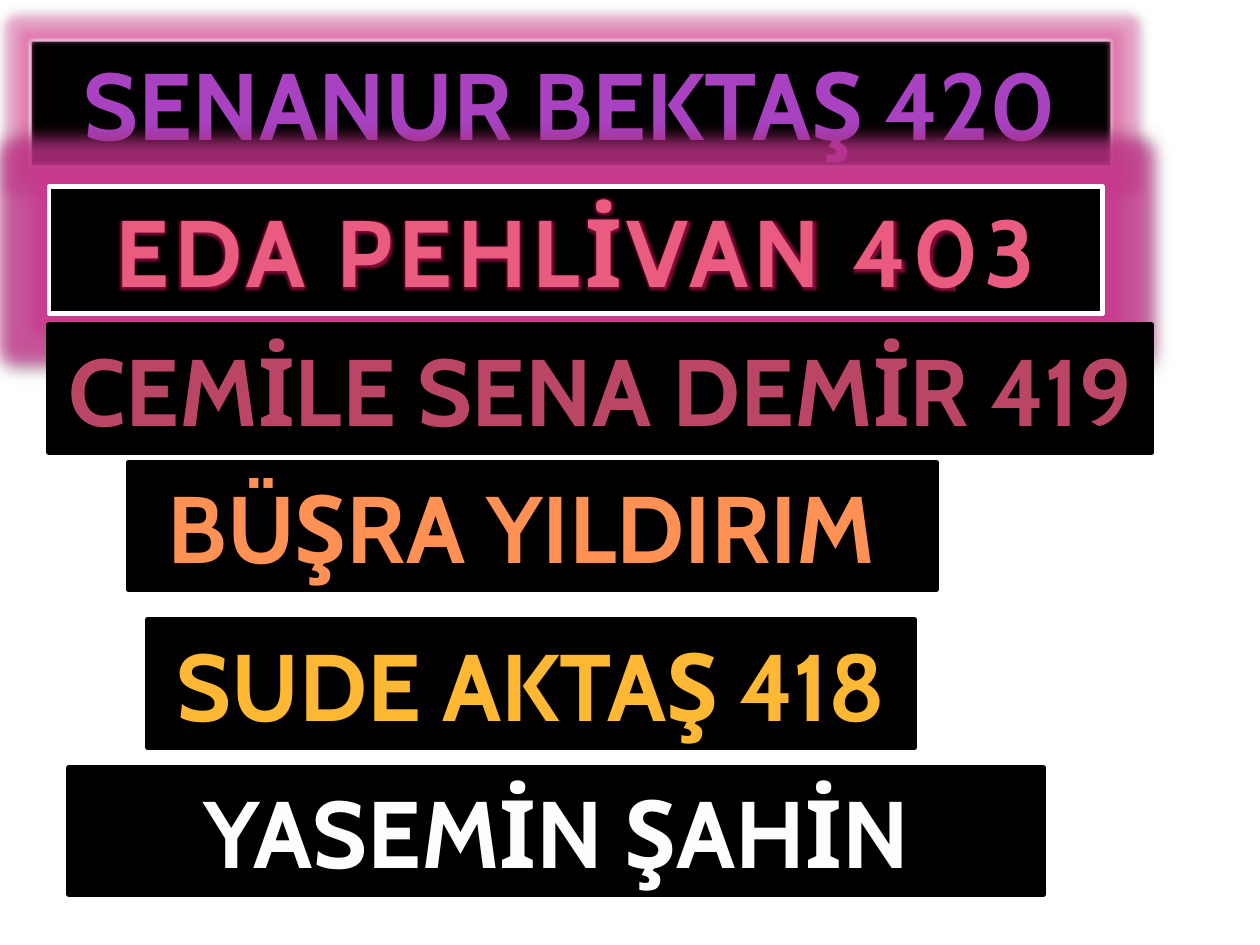
from lxml import etree
from pptx import Presentation
from pptx.dml.color import RGBColor
from pptx.enum.shapes import MSO_SHAPE as Shape
from pptx.enum.text import MSO_ANCHOR as Anchor, MSO_AUTO_SIZE as Fit, PP_ALIGN as Align
from pptx.oxml.ns import qn
from pptx.util import Inches, Pt

BLACK = RGBColor(0x00, 0x00, 0x00)
WHITE = RGBColor(0xFF, 0xFF, 0xFF)
PURPLE = RGBColor(0xA9, 0x42, 0xC1)
PINK = RGBColor(0xEA, 0x5B, 0x80)
ROSE = RGBColor(0xBA, 0x45, 0x65)
ORANGE = RGBColor(0xFF, 0x91, 0x54)
GOLD = RGBColor(0xFF, 0xB8, 0x33)
CREAM = RGBColor(0xFF, 0xFC, 0xFC)
HALO = RGBColor(0xF7, 0x59, 0xAB)
DEEP = RGBColor(0xCC, 0x36, 0x90)
WINE = RGBColor(0xA0, 0x10, 0x46)

HIGH = 1.01
FONT = {"name": "Cabin", "size": Pt(54), "bold": True}

# Name, left, top, width, text colour, line colour, line width
NAMES = [
    ("SENANUR BEKTAŞ 420", 0.23, 0.31, 8.59, PURPLE, WHITE, 2.5),
    ("EDA PEHLİVAN 403", 0.39, 1.48, 8.36, PINK, WHITE, 2.5),
    ("CEMİLE SENA DEMİR 419", 0.39, 2.58, 8.75, ROSE, BLACK, 3.15),
    ("BÜŞRA YILDIRIM ", 1.02, 3.67, 6.41, ORANGE, BLACK, 3.15),
    ("SUDE AKTAŞ 418", 1.17, 4.92, 6.09, GOLD, BLACK, 3.15),
    ("YASEMİN ŞAHİN", 0.55, 6.09, 7.73, CREAM, BLACK, 3.15),
]


def add_box(slide, text, left, top, width, color, edge, thick):
    """Add a black name plate with one centred line of text."""
    box = slide.shapes.add_shape(
        Shape.RECTANGLE, Inches(left), Inches(top), Inches(width), Inches(HIGH))
    box.shadow.inherit = False
    box.fill.solid()
    box.fill.fore_color.rgb = BLACK
    box.line.color.rgb = edge
    box.line.width = Pt(thick)

    frame = box.text_frame
    frame.word_wrap = True
    frame.auto_size = Fit.SHAPE_TO_FIT_TEXT
    frame.vertical_anchor = Anchor.MIDDLE
    para = frame.paragraphs[0]
    para.alignment = Align.CENTER
    run = para.add_run()
    run.text = text
    for key, value in FONT.items():
        setattr(run.font, key, value)
    run.font.color.rgb = color
    return box


def add_tint(node, color, alpha):
    tint = etree.SubElement(node, qn("a:srgbClr"), val=str(color))
    etree.SubElement(tint, qn("a:alpha"), val=str(alpha * 1000))


def add_glow(effects, size, color, alpha):
    glow = etree.SubElement(effects, qn("a:glow"), rad=str(Pt(size)))
    add_tint(glow, color, alpha)


def add_shade(effects, blur, dist, alpha):
    shade = etree.SubElement(
        effects, qn("a:outerShdw"), blurRad=str(Pt(blur)), dist=str(Pt(dist)),
        dir="5400000", rotWithShape="0")
    add_tint(shade, BLACK, alpha)


def get_list(box):
    return box._element.spPr.find(qn("a:effectLst"))


def main():
    deck = Presentation()
    deck.slide_width, deck.slide_height = Inches(10), Inches(7.5)
    slide = deck.slides.add_slide(deck.slide_layouts[6])

    # Name plates
    first, second, *_ = [add_box(slide, *row) for row in NAMES]

    # Pink halo and soft edge of the first plate
    effects = get_list(first)
    add_glow(effects, 11, HALO, 40)
    add_shade(effects, 5, 0, 40)
    etree.SubElement(effects, qn("a:softEdge"), rad=str(Pt(2.5)))

    # Deeper halo of the second plate
    effects = get_list(second)
    add_glow(effects, 18, DEEP, 75)
    add_shade(effects, 4, 2, 38)

    # Spaced, glowing letters of the second plate
    props = second.text_frame.paragraphs[0].runs[0].font._element
    props.set("spc", "300")
    effects = etree.Element(qn("a:effectLst"))
    props.find(qn("a:solidFill")).addnext(effects)
    add_glow(effects, 4, WINE, 80)

    deck.save("out.pptx")


if __name__ == "__main__":
    main()
